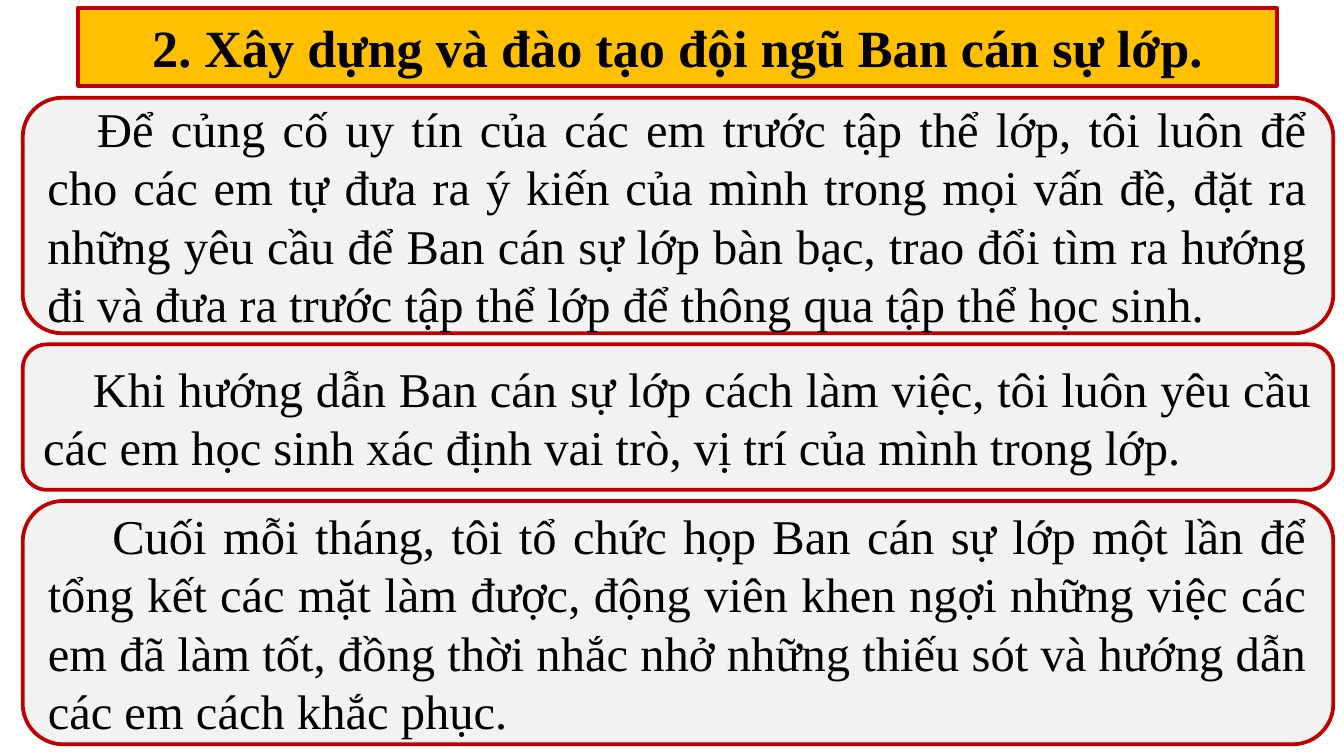
import pptx
import pptx.dml.color
import pptx.enum.shapes
import pptx.enum.text
import pptx.oxml
import pptx.oxml.ns
import pptx.util

Cm = pptx.util.Cm
ALIGN = pptx.enum.text.PP_ALIGN


def color(value):
    return pptx.dml.color.RGBColor.from_string(value)


class Deck:
    font = "Times New Roman"
    ink = "000000"
    border = "C00000"
    title_fill = "FFC000"
    panel_fill = "F2F2F2"

    def __init__(self, width, height):
        self.prs = pptx.Presentation()
        self.prs.slide_width = Cm(width)
        self.prs.slide_height = Cm(height)
        self.s = self.prs.slides.add_slide(self.prs.slide_layouts[5])

    def style(self, sp, fill, text, size, align, bold=False):
        sp.shadow.inherit = False
        sp.fill.solid()
        sp.fill.fore_color.rgb = color(fill)
        sp.line.color.rgb = color(self.border)
        sp.line.width = pptx.util.Pt(2)
        tf = sp.text_frame
        tf.text = text
        tf.word_wrap = True
        tf.auto_size = pptx.enum.text.MSO_AUTO_SIZE.NONE
        tf.vertical_anchor = pptx.enum.text.MSO_ANCHOR.MIDDLE
        p = tf.paragraphs[0]
        p.alignment = align
        r = p.runs[0]
        r.font.name = self.font
        r.font.size = pptx.util.Pt(size)
        r.font.bold = bold
        r.font.color.rgb = color(self.ink)
        return p

    def title(self, text, left, top, width, height):
        sp = self.s.shapes.title
        sp.left, sp.top, sp.width, sp.height = map(Cm, (left, top, width, height))
        geometry = pptx.oxml.parse_xml(
            f'<a:prstGeom {pptx.oxml.ns.nsdecls("a")} prst="flowChartAlternateProcess">'
            "<a:avLst/></a:prstGeom>"
        )
        sp.element.spPr.append(geometry)
        self.style(sp, self.title_fill, text, 28, ALIGN.CENTER, bold=True)

    def panel(self, text, left, top, width, height, indent):
        sp = self.s.shapes.add_shape(
            pptx.enum.shapes.MSO_SHAPE.FLOWCHART_ALTERNATE_PROCESS,
            Cm(left), Cm(top), Cm(width), Cm(height),
        )
        p = self.style(sp, self.panel_fill, text, 26, ALIGN.JUSTIFY)
        p.space_after = pptx.util.Pt(6)
        p._p.get_or_add_pPr().set("indent", str(Cm(indent)))


def main():
    deck = Deck(25.4, 14.29)
    deck.title("2. Xây dựng và đào tạo đội ngũ Ban cán sự lớp.", 1.47, 0.15, 22.66, 1.47)
    panels = [
        ("Để củng cố uy tín của các em trước tập thể lớp, tôi luôn để cho các em tự "
         "đưa ra ý kiến của mình trong mọi vấn đề, đặt ra những yêu cầu để Ban cán sự "
         "lớp bàn bạc, trao đổi tìm ra hướng đi và đưa ra trước tập thể lớp để thông "
         "qua tập thể học sinh.", 4.45, 0.94),
        ("Khi hướng dẫn Ban cán sự lớp cách làm việc, tôi luôn yêu cầu các em học sinh "
         "xác định vai trò, vị trí của mình trong lớp.", 2.75, 0.94),
        ("Cuối mỗi tháng, tôi tổ chức họp Ban cán sự lớp một lần để tổng kết các mặt "
         "làm được, động viên khen ngợi những việc các em đã làm tốt, đồng thời nhắc "
         "nhở những thiếu sót và hướng dẫn các em cách khắc phục.", 4.6, 1.22),
    ]
    top, gap = 1.85, 0.21
    for text, height, indent in panels:
        deck.panel(text, 0.43, top, 24.77, height, indent)
        top += height + gap
    deck.prs.save("out.pptx")


if __name__ == "__main__":
    main()
